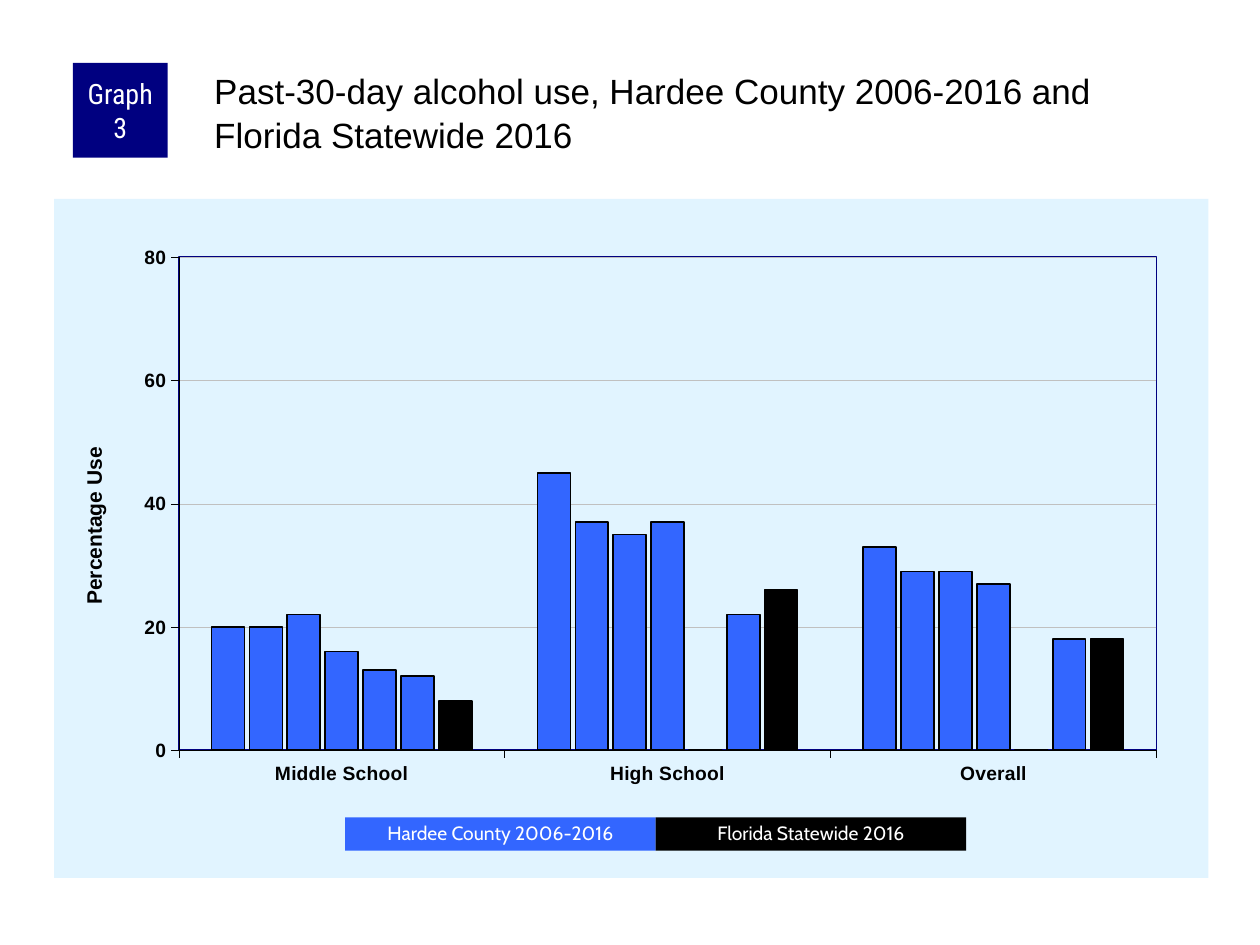
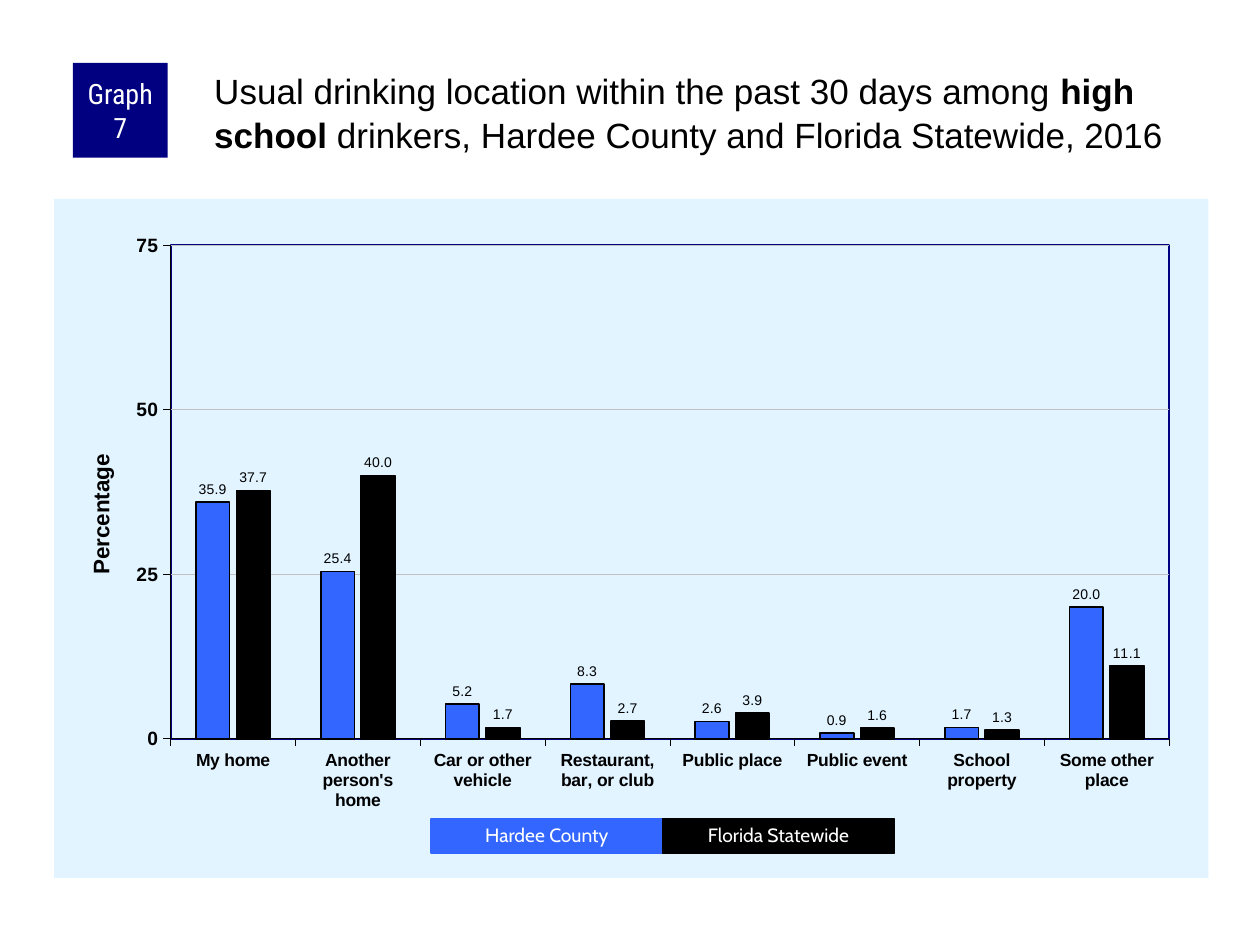
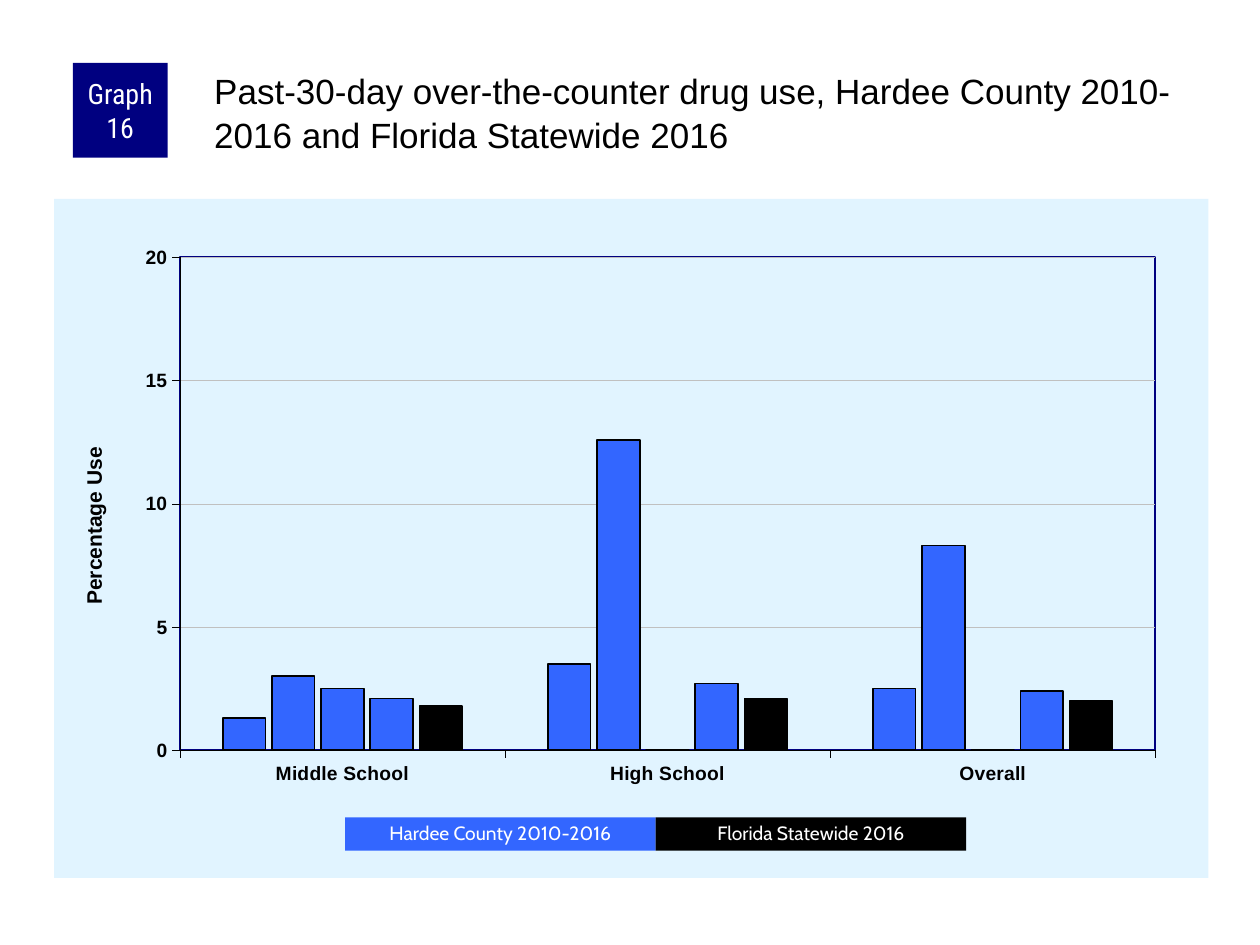
from dataclasses import dataclass

from lxml import etree
from pptx import Presentation
from pptx.chart.chart import Chart
from pptx.chart.data import CategoryChartData
from pptx.dml.color import RGBColor
from pptx.enum.chart import XL_CHART_TYPE, XL_LABEL_POSITION, XL_TICK_MARK
from pptx.enum.shapes import MSO_SHAPE
from pptx.enum.text import MSO_ANCHOR, PP_ALIGN
from pptx.oxml import parse_xml
from pptx.oxml.ns import nsdecls, qn
from pptx.slide import Slide
from pptx.util import Cm, Pt


@dataclass(frozen=True)
class Theme:
    county: str = "3366FF"
    state: str = "000000"
    badge: str = "000080"
    panel: str = "E1F4FF"
    grid: str = "C0C0C0"
    ink: str = "000000"
    paper: str = "FFFFFF"
    body_font: str = "Arial"
    badge_font: str = "Roboto Condensed"
    legend_font: str = "Cabin"
    title_size: float = 20
    badge_size: float = 16
    legend_size: float = 11
    value_size: float = 11
    label_size: float = 8


THEME = Theme()


@dataclass(frozen=True)
class Box:
    """A rectangle in centimetres."""
    left: float
    top: float
    width: float
    height: float

    def lengths(self) -> tuple[Cm, Cm, Cm, Cm]:
        return Cm(self.left), Cm(self.top), Cm(self.width), Cm(self.height)


@dataclass(frozen=True)
class Graph:
    """One graph slide; odd title parts are bold, the last series is the state."""
    number: int
    title: tuple[str, ...]
    legend: tuple[str, str]
    legend_box: Box
    categories: tuple[str, ...]
    series: tuple[tuple[float, ...], ...]
    axis_title: str
    maximum: float
    major: float
    plot: tuple[float, float, float, float]
    axis_title_place: tuple[float, float] = (0.02, 0.36)
    axis_title_size: float = 12
    category_size: float = 11
    gap: int = 200
    overlap: int = -15
    labelled: bool = False
    legend_outlined: bool = False


CHART_BOX = Box(1.09, 4.01, 23.27, 13.69)
BADGE_BOX = Box(1.47, 1.27, 1.91, 1.91)
TITLE_BOX = Box(4.24, 1.27, 20.12, 2.11)
WIDE_LEGEND = Box(6.96, 16.48, 6.26, 0.67)
NARROW_LEGEND = Box(8.69, 16.51, 4.67, 0.69)
SCHOOLS = ("Middle School", "High School", "Overall")

GRAPHS = (
    Graph(
        3, ("Past-30-day alcohol use, Hardee County 2006-2016 and Florida Statewide 2016",),
        ("Hardee County 2006-2016", "Florida Statewide 2016"), WIDE_LEGEND, SCHOOLS,
        ((20, 45, 33), (20, 37, 29), (22, 35, 29), (16, 37, 27),
         (13, 0, 0), (12, 22, 18), (8, 26, 18)),
        "Percentage Use", 80, 20, (0.108, 0.086, 0.847, 0.726)),
    Graph(
        7, ("Usual drinking location within the past 30 days among ", "high school",
            " drinkers, Hardee County and Florida Statewide, 2016"),
        ("Hardee County", "Florida Statewide"), NARROW_LEGEND,
        ("My home", "Another person's home", "Car or other vehicle", "Restaurant, bar, or club",
         "Public place", "Public event", "School property", "Some other place"),
        ((35.9, 25.4, 5.2, 8.3, 2.6, 0.9, 1.7, 20), (37.7, 40, 1.7, 2.7, 3.9, 1.6, 1.3, 11.1)),
        "Percentage", 75, 25, (0.101, 0.068, 0.865, 0.727),
        axis_title_place=(0.025, 0.37), axis_title_size=12.75, category_size=10,
        gap=150, overlap=-20, labelled=True, legend_outlined=True),
    Graph(
        16, ("Past-30-day over-the-counter drug use, Hardee County 2010-2016 "
             "and Florida Statewide 2016",),
        ("Hardee County 2010-2016", "Florida Statewide 2016"), WIDE_LEGEND, SCHOOLS,
        ((1.3, 3.5, 2.5), (3, 12.6, 8.3), (2.5, 0, 0), (2.1, 2.7, 2.4), (1.8, 2.1, 2)),
        "Percentage Use", 20, 5, (0.109, 0.086, 0.845, 0.726)),
)


def style_font(font, name: str, size: float, color: str, bold: bool | None = None) -> None:
    font.name = name
    font.size = Pt(size)
    font.bold = bold
    font.color.rgb = RGBColor.from_string(color)


def style_line(line, color: str, width: float) -> None:
    line.color.rgb = RGBColor.from_string(color)
    line.width = Pt(width)


def add_block(slide: Slide, box: Box, fill: str, text: str, font_name: str, size: float):
    """Add a filled rectangle with centred white text."""
    shape = slide.shapes.add_shape(MSO_SHAPE.RECTANGLE, *box.lengths())
    shape.shadow.inherit = False
    shape.fill.solid()
    shape.fill.fore_color.rgb = RGBColor.from_string(fill)
    shape.line.fill.background()
    frame = shape.text_frame
    frame.word_wrap = True
    frame.vertical_anchor = MSO_ANCHOR.MIDDLE
    paragraph = frame.paragraphs[0]
    paragraph.text = text
    paragraph.alignment = PP_ALIGN.CENTER
    style_font(paragraph.font, font_name, size, THEME.paper)
    return shape


def add_badge(slide: Slide, number: int) -> None:
    badge = add_block(slide, BADGE_BOX, THEME.badge, f"Graph {number}",
                      THEME.badge_font, THEME.badge_size)
    frame = badge.text_frame
    frame.margin_left = frame.margin_right = Cm(0.13)
    frame.margin_top = frame.margin_bottom = 0


def add_title(slide: Slide, parts: tuple[str, ...]) -> None:
    frame = slide.shapes.add_textbox(*TITLE_BOX.lengths()).text_frame
    frame.word_wrap = True
    frame.margin_left = frame.margin_top = Cm(0.08)
    frame.margin_right = frame.margin_bottom = 0
    paragraph = frame.paragraphs[0]
    paragraph.line_spacing = 1.05
    style_font(paragraph.font, THEME.body_font, THEME.title_size, THEME.ink)
    for index, part in enumerate(parts):
        run = paragraph.add_run()
        run.text = part
        if index % 2:
            run.font.bold = True


def add_legend(slide: Slide, graph: Graph) -> None:
    box = graph.legend_box
    for index, (text, color) in enumerate(zip(graph.legend, (THEME.county, THEME.state))):
        place = Box(box.left + index * box.width, box.top, box.width, box.height)
        block = add_block(slide, place, color, text, THEME.legend_font, THEME.legend_size)
        block.text_frame.paragraphs[0].line_spacing = 0.9
        if graph.legend_outlined:
            style_line(block.line, color, 0.75)


def set_layout(parent: etree.ElementBase, position: int, **parts: float) -> None:
    """Fix the place of a plot area (x, y, w, h) or of a title (x, y)."""
    for layout in parent.findall(qn("c:layout")):
        parent.remove(layout)
    target = '<c:layoutTarget val="inner"/>' if "w" in parts else ""
    modes = "".join(f'<c:{key}Mode val="edge"/>' for key in parts if key in "xy")
    values = "".join(f'<c:{key} val="{value}"/>' for key, value in parts.items())
    parent.insert(position, parse_xml(
        f'<c:layout {nsdecls("c")}><c:manualLayout>{target}{modes}{values}'
        "</c:manualLayout></c:layout>"))


def area_style(fill: str, line: str) -> etree.ElementBase:
    return parse_xml(f'<c:spPr {nsdecls("c", "a")}>{fill}{line}</c:spPr>')


def style_chart_areas(chart: Chart, graph: Graph) -> None:
    """Colour the panel, frame the plot and place plot and axis title."""
    chart_space = chart.element
    chart_space.find(qn("c:chart")).addnext(area_style(
        f'<a:solidFill><a:srgbClr val="{THEME.panel}"/></a:solidFill>',
        "<a:ln><a:noFill/></a:ln>"))
    plot_area = chart_space.xpath("c:chart/c:plotArea")[0]
    plot_area.append(area_style(
        "<a:noFill/>",
        f'<a:ln w="{Pt(1)}"><a:solidFill><a:srgbClr val="{THEME.badge}"/></a:solidFill></a:ln>'))
    set_layout(plot_area, 0, **dict(zip("xywh", graph.plot)))
    axis_title = plot_area.xpath("c:valAx/c:title")[0]
    set_layout(axis_title, 1, **dict(zip("xy", graph.axis_title_place)))


def style_axes(chart: Chart, graph: Graph) -> None:
    value_axis = chart.value_axis
    for axis, size in ((chart.category_axis, graph.category_size),
                       (value_axis, THEME.value_size)):
        axis.major_tick_mark = XL_TICK_MARK.OUTSIDE
        axis.minor_tick_mark = XL_TICK_MARK.NONE
        style_font(axis.tick_labels.font, THEME.body_font, size, THEME.ink, True)
        style_line(axis.format.line, THEME.ink, 0.25)
    value_axis.minimum_scale = 0
    value_axis.maximum_scale = graph.maximum
    value_axis.major_unit = graph.major
    value_axis.has_major_gridlines = True
    style_line(value_axis.major_gridlines.format.line, THEME.grid, 0.25)
    value_axis.tick_labels.number_format = "0"
    value_axis.tick_labels.number_format_is_linked = False
    paragraph = value_axis.axis_title.text_frame.paragraphs[0]
    paragraph.text = graph.axis_title
    style_font(paragraph.font, THEME.body_font, graph.axis_title_size, THEME.ink, True)


def style_columns(chart: Chart, graph: Graph) -> None:
    plot = chart.plots[0]
    plot.gap_width = graph.gap
    plot.overlap = graph.overlap
    plot.vary_by_categories = False
    colors = [THEME.county] * (len(graph.series) - 1) + [THEME.state]
    for series, color in zip(plot.series, colors):
        series.format.fill.solid()
        series.format.fill.fore_color.rgb = RGBColor.from_string(color)
        style_line(series.format.line, THEME.ink, 1)
        if graph.labelled:
            labels = series.data_labels
            labels.show_value = True
            labels.position = XL_LABEL_POSITION.OUTSIDE_END
            labels.number_format = "0.0"
            labels.number_format_is_linked = False
            style_font(labels.font, THEME.body_font, THEME.label_size, THEME.ink)


def add_column_chart(slide: Slide, graph: Graph) -> None:
    data = CategoryChartData()
    data.categories = graph.categories
    for index, values in enumerate(graph.series, start=1):
        data.add_series(f"Series {index}", values)
    chart = slide.shapes.add_chart(
        XL_CHART_TYPE.COLUMN_CLUSTERED, *CHART_BOX.lengths(), data).chart
    chart.has_title = False
    chart.has_legend = False
    style_font(chart.font, THEME.body_font, THEME.label_size, THEME.ink)
    style_axes(chart, graph)
    style_columns(chart, graph)
    style_chart_areas(chart, graph)


def main() -> None:
    presentation = Presentation()
    presentation.slide_width = Cm(25.4)
    presentation.slide_height = Cm(19.05)
    for graph in GRAPHS:
        slide = presentation.slides.add_slide(presentation.slide_layouts[6])
        add_column_chart(slide, graph)
        add_badge(slide, graph.number)
        add_title(slide, graph.title)
        add_legend(slide, graph)
    presentation.save("out.pptx")


if __name__ == "__main__":
    main()
